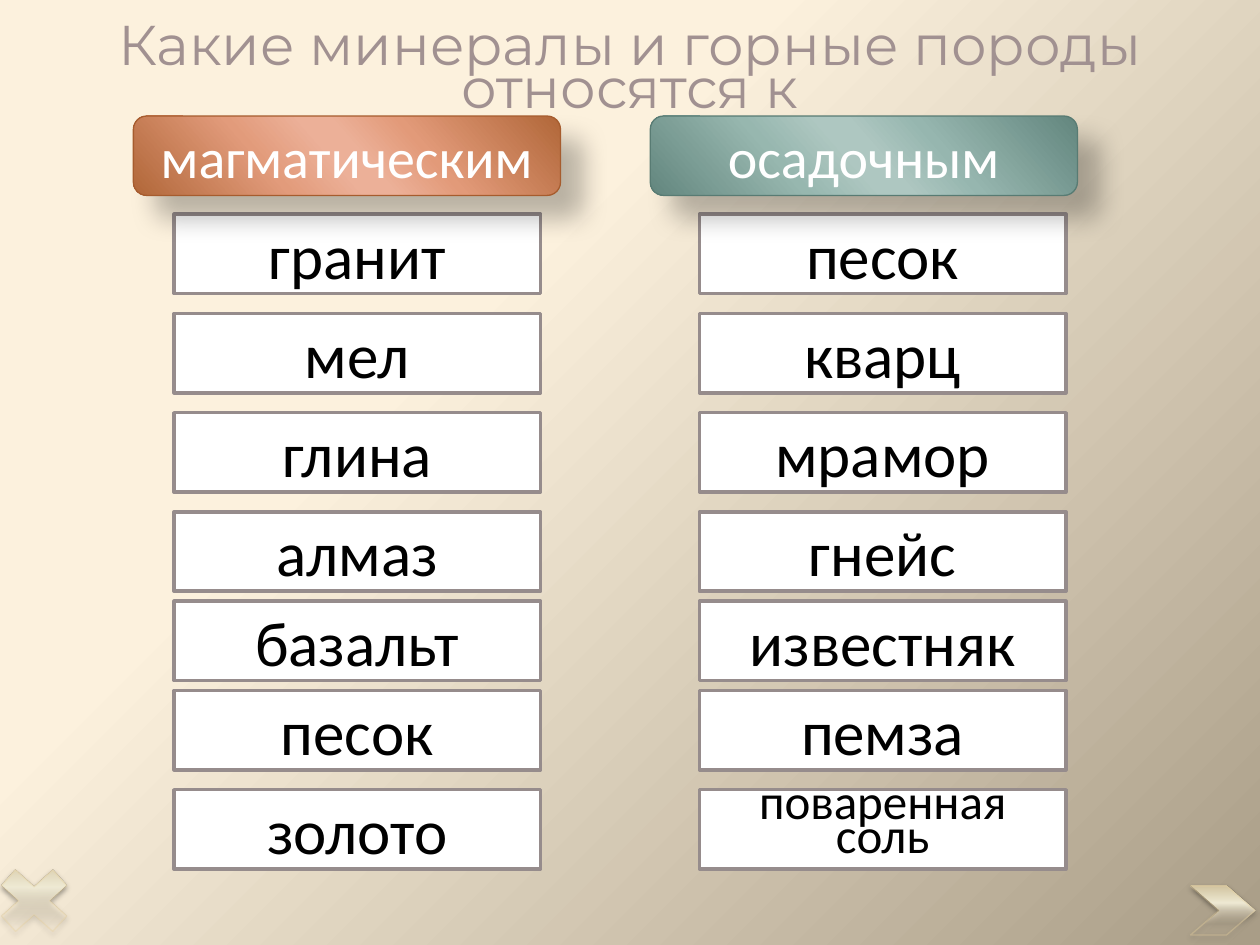
from itertools import accumulate

from lxml import etree
from pptx import Presentation
from pptx.dml.color import RGBColor
from pptx.enum.shapes import MSO_SHAPE
from pptx.enum.text import MSO_ANCHOR, MSO_AUTO_SIZE, PP_ALIGN
from pptx.oxml import parse_xml
from pptx.oxml.ns import nsdecls, qn
from pptx.util import Cm, Pt

WHITE = RGBColor(0xFF, 0xFF, 0xFF)
BLACK = RGBColor(0x00, 0x00, 0x00)
CARD_EDGE = RGBColor(0x96, 0x8C, 0x8C)
COPPER = RGBColor(0xB1, 0x67, 0x39)
COPPER_EDGE = RGBColor(0xA6, 0x5C, 0x2E)
TEAL = RGBColor(0x63, 0x86, 0x7E)
TEAL_EDGE = RGBColor(0x58, 0x7B, 0x73)
SAND_EDGE = RGBColor(0xE8, 0xD1, 0x9D)

COPPER_STOPS = [(0, COPPER), (33, RGBColor(0xE2, 0x9A, 0x79)),
                (47, RGBColor(0xEC, 0xB0, 0x98)), (53, RGBColor(0xEC, 0xB0, 0x98)),
                (68, RGBColor(0xE2, 0x9B, 0x7B)), (100, COPPER)]
TEAL_STOPS = [(0, TEAL), (33, RGBColor(0x96, 0xB6, 0xAF)),
              (47, RGBColor(0xAE, 0xC7, 0xC1)), (53, RGBColor(0xAE, 0xC7, 0xC1)),
              (68, RGBColor(0x97, 0xB7, 0xAF)), (100, TEAL)]
SAND_STOPS = [(23, RGBColor(0xFF, 0xEF, 0xD1), 0), (65, RGBColor(0xF0, 0xEB, 0xD5)),
              (100, RGBColor(0xD1, 0xC3, 0x9F))]
TITLE_STOPS = [(0, RGBColor(0x4D, 0x43, 0x43)), (78, RGBColor(0xA1, 0x91, 0x91)),
               (100, RGBColor(0xF6, 0xF4, 0xF4))]
BACKGROUND_STOPS = [(35, RGBColor(0xFC, 0xF1, 0xDD), 43), (100, RGBColor(0xA9, 0x9D, 0x87))]

TITLE = "Какие минералы и горные породы относятся к"
GROUPS = [
    {"heading": "магматическим", "heading_left": 2.69, "card_left": 3.51,
     "stops": COPPER_STOPS, "edge": COPPER_EDGE,
     "rocks": ["гранит", "мел", "глина", "алмаз", "базальт", "песок", "золото"]},
    {"heading": "осадочным", "heading_left": 13.11, "card_left": 14.1,
     "stops": TEAL_STOPS, "edge": TEAL_EDGE,
     "rocks": ["песок", "кварц", "мрамор", "гнейс", "известняк", "пемза",
               "поваренная соль"]},
]
NAVIGATION = [
    (MSO_SHAPE.MATH_MULTIPLY, (-0.3, 17.27, 1.98, 1.78), None),
    (MSO_SHAPE.CHEVRON, (24, 17.86, 1.3, 0.99), 0.58),
]

BOX_HEIGHT = 1.6
CARD_WIDTH = 7.39
HEADING_WIDTH = 8.61
HEADING_TOP = 2.34
CARD_TOPS = list(accumulate([4.32, 2, 2, 2, 1.8, 1.8, 2]))
HEADING_SHADOW = {"opacity": 26, "blur": 15, "distance": 18, "angle": 45}
NAVIGATION_SHADOW = {"opacity": 38, "blur": 3.1, "distance": 1.6, "angle": 90}


def set_gradient(fill, parent, stops, angle=None):
    fill.solid()
    gradient = parse_xml(f'<a:gradFill {nsdecls("a")} rotWithShape="1"><a:gsLst/></a:gradFill>')
    for position, color, *opacity in stops:
        stop = etree.SubElement(gradient[0], qn("a:gs"), pos=str(position * 1000))
        tint = etree.SubElement(stop, qn("a:srgbClr"), val=str(color))
        if opacity:
            etree.SubElement(tint, qn("a:alpha"), val=str(opacity[0] * 1000))
    if angle is None:
        spread = etree.SubElement(gradient, qn("a:path"), path="circle")
        etree.SubElement(spread, qn("a:fillToRect"), r="100000", b="100000")
    else:
        etree.SubElement(gradient, qn("a:lin"), ang=str(angle * 60000), scaled="0")
    parent.replace(parent.find(qn("a:solidFill")), gradient)


def set_shadow(shape, opacity, blur, distance, angle):
    effects = shape._element.spPr.find(qn("a:effectLst"))
    shadow = etree.SubElement(effects, qn("a:outerShdw"), blurRad=str(Pt(blur)),
                              dist=str(Pt(distance)), dir=str(angle * 60000),
                              algn="tl", rotWithShape="0")
    tint = etree.SubElement(shadow, qn("a:srgbClr"), val=str(BLACK))
    etree.SubElement(tint, qn("a:alpha"), val=str(opacity * 1000))


def write(shape, text, size=36, font="Calibri", color=BLACK,
          anchor=MSO_ANCHOR.MIDDLE, spacing=None):
    frame = shape.text_frame
    frame.word_wrap = True
    frame.auto_size = MSO_AUTO_SIZE.NONE
    frame.vertical_anchor = anchor
    paragraph = frame.paragraphs[0]
    paragraph.alignment = PP_ALIGN.CENTER
    if spacing:
        paragraph.line_spacing = Pt(spacing)
    run = paragraph.add_run()
    run.text = text
    run.font.size = Pt(size)
    run.font.name = font
    run.font.color.rgb = color
    return run


def add_box(slide, kind, place, edge, edge_width):
    shape = slide.shapes.add_shape(kind, *map(Cm, place))
    shape.shadow.inherit = False
    shape.line.color.rgb = edge
    shape.line.width = Pt(edge_width)
    return shape


def add_card(slide, rock, left, top):
    card = add_box(slide, MSO_SHAPE.RECTANGLE, (left, top, CARD_WIDTH, BOX_HEIGHT), CARD_EDGE, 2)
    card.fill.solid()
    card.fill.fore_color.rgb = WHITE
    if " " in rock:
        write(card, rock, size=28, anchor=MSO_ANCHOR.BOTTOM, spacing=19)
    else:
        write(card, rock)


def add_heading(slide, group):
    place = (group["heading_left"], HEADING_TOP, HEADING_WIDTH, BOX_HEIGHT)
    heading = add_box(slide, MSO_SHAPE.ROUNDED_RECTANGLE, place, group["edge"], 0.75)
    set_gradient(heading.fill, heading._element.spPr, group["stops"], 139)
    set_shadow(heading, **HEADING_SHADOW)
    write(heading, group["heading"], size=32, color=WHITE)


def add_navigation(slide, kind, place, adjustment):
    button = add_box(slide, kind, place, SAND_EDGE, 0.75)
    if adjustment:
        button.adjustments[0] = adjustment
    set_gradient(button.fill, button._element.spPr, SAND_STOPS, 270)
    edge_tint = button._element.spPr.find(qn("a:ln")).find(".//" + qn("a:srgbClr"))
    etree.SubElement(edge_tint, qn("a:alpha"), val="36000")
    set_shadow(button, **NAVIGATION_SHADOW)


def main():
    deck = Presentation()
    deck.slide_width, deck.slide_height = Cm(25.4), Cm(19.05)
    slide = deck.slides.add_slide(deck.slide_layouts[5])

    backdrop = slide.background.fill
    backdrop.solid()
    set_gradient(backdrop, slide._element.find(".//" + qn("p:bgPr")), BACKGROUND_STOPS)

    title = slide.shapes.title
    title.left, title.top, title.width, title.height = map(Cm, (0, 0.74, 25.4, BOX_HEIGHT))
    title_run = write(title, TITLE, size=32, font="Montserrat", spacing=25)
    set_gradient(title_run.font.fill, title_run._r.rPr, TITLE_STOPS, 90)

    for group in GROUPS:
        for rock, top in zip(group["rocks"], CARD_TOPS):
            add_card(slide, rock, group["card_left"], top)
    for group in GROUPS:
        add_heading(slide, group)
    for button in NAVIGATION:
        add_navigation(slide, *button)

    deck.save("out.pptx")


if __name__ == "__main__":
    main()
